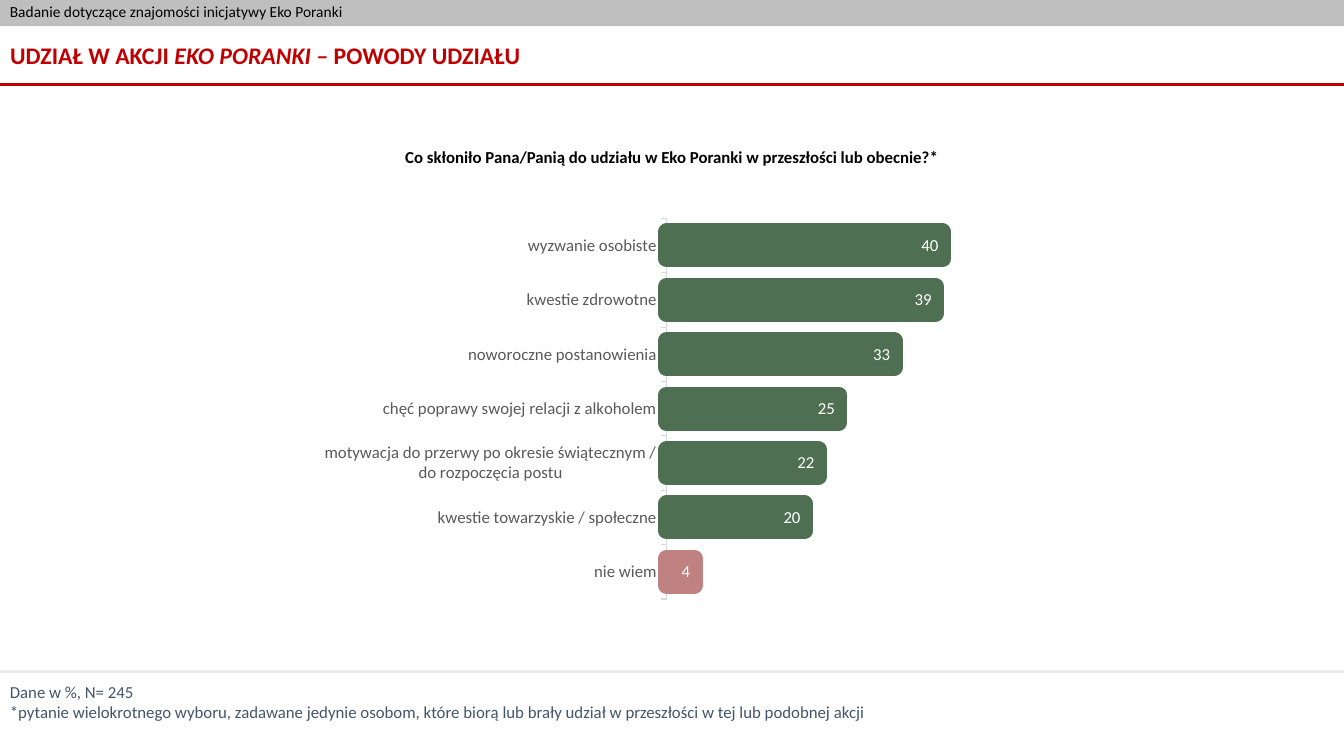
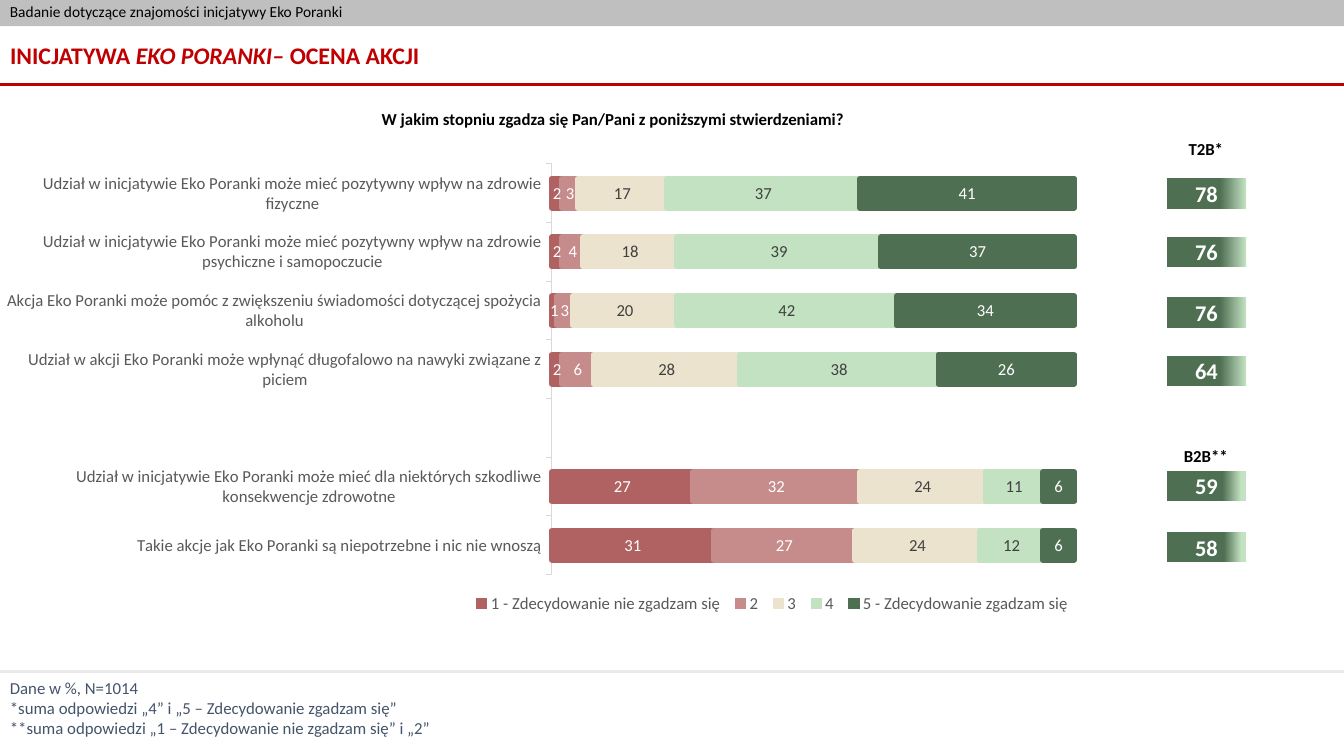
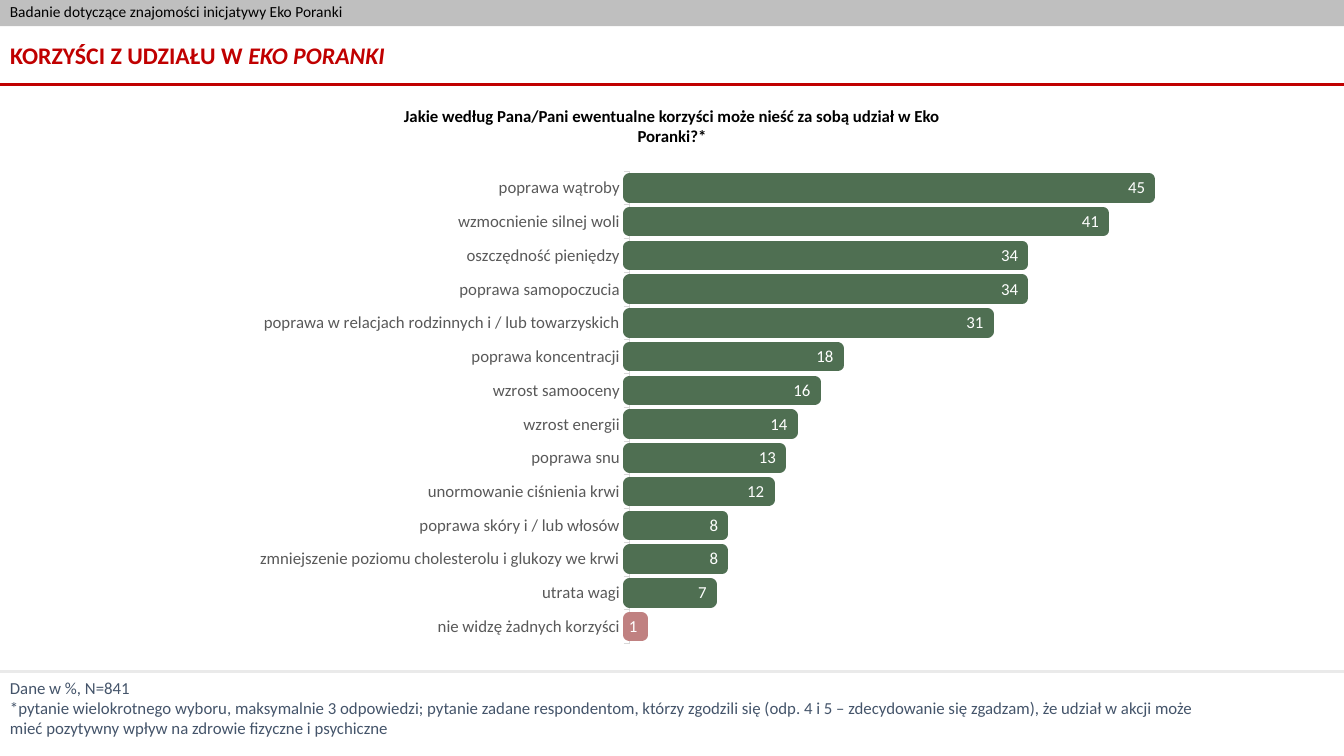
from lxml import etree
from pptx import Presentation
from pptx import util as u
from pptx.chart.data import CategoryChartData
from pptx.dml.color import RGBColor
from pptx.enum import chart as ch
from pptx.enum import shapes, text
from pptx.oxml import parse_xml
from pptx.oxml.ns import nsdecls, qn

WIDTH, HEIGHT = 13.33, 7.5
RED, GREEN, MINT, ROSE = "C00000", "4F6F52", "C3E2C2", "C08181"
WHITE, INK = "FFFFFF", "404040"
BAND_TEXT = "Badanie dotyczące znajomości inicjatywy Eko Poranki"
RULES = [(6.66, "EAEAEA"), (0.84, RED)]

BAND_FONT = {"name": "Calibri", "size": u.Pt(11), "color": "000000"}
TITLE_FONT = {"name": "Calibri", "size": u.Pt(17), "color": RED, "bold": True}
QUESTION_FONT = {"name": "Calibri", "size": u.Pt(12), "color": "000000", "bold": True}
NOTE_FONT = {"name": "Calibri", "size": u.Pt(12), "color": "44546A"}
SCORE_FONT = {"name": "Calibri", "size": u.Pt(16), "color": WHITE, "bold": True}
CHART_FONT = {"name": "Calibri", "size": u.Pt(10), "color": "000000"}
AXIS_FONT = {"name": "Calibri", "size": u.Pt(12), "color": "595959"}

DECK = [
    {
        "title": [("UDZIAŁ W AKCJI ", False), ("EKO PORANKI – ", True), ("POWODY UDZIAŁU", False)],
        "question": ("Co skłoniło Pana/Panią do udziału w Eko Poranki w przeszłości lub obecnie?*",
                     (3.64, 1.41, 6.05, 0.3)),
        "notes": ["Dane w %, N= 245",
                  "*pytanie wielokrotnego wyboru, zadawane jedynie osobom, które biorą lub brały "
                  "udział w przeszłości w tej lub podobnej akcji"],
        "notes_box": (0, 6.71, 11.4, 0.5),
        "chart": {
            "box": (3.14, 1.93, 6.55, 4.45), "plot": (0.53, 0.053, 0.47, 0.849),
            "maximum": 45, "outline": 12,
            "answers": [("nie wiem", 4), ("kwestie towarzyskie / społeczne", 20),
                        ("motywacja do przerwy po okresie świątecznym / do rozpoczęcia postu", 22),
                        ("chęć poprawy swojej relacji z alkoholem", 25),
                        ("noworoczne postanowienia", 33), ("kwestie zdrowotne", 39),
                        ("wyzwanie osobiste", 40)],
            "series": [("Series 1", GREEN, WHITE)],
        },
    },
    {
        "title": [("INICJATYWA ", False), ("EKO PORANKI– ", True), ("OCENA AKCJI", False)],
        "question": ("W jakim stopniu zgadza się Pan/Pani z poniższymi stwierdzeniami?",
                     (2.39, 1.03, 7.38, 0.3)),
        "notes": ["Dane w %, N=1014",
                  "*suma odpowiedzi „4” i „5 – Zdecydowanie zgadzam się”",
                  "**suma odpowiedzi „1 – Zdecydowanie nie zgadzam się” i „2”"],
        "notes_box": (0, 6.67, 11.4, 0.71),
        "chart": {
            "box": (0.07, 1.47, 10.67, 4.75), "plot": (0.504, 0.033, 0.488, 0.858),
            "legend": (0.425, 0.917, 0.57, 0.07), "outline": 4,
            "answers": [
                ("Udział w inicjatywie Eko Poranki może mieć pozytywny wpływ na zdrowie fizyczne",
                 2, 3, 17, 37, 41),
                ("Udział w inicjatywie Eko Poranki może mieć pozytywny wpływ na zdrowie "
                 "psychiczne i samopoczucie", 2, 4, 18, 39, 37),
                ("Akcja Eko Poranki może pomóc z zwiększeniu świadomości dotyczącej spożycia alkoholu",
                 1, 3, 20, 42, 34),
                ("Udział w akcji Eko Poranki może wpłynąć długofalowo na nawyki związane z piciem",
                 2, 6, 28, 38, 26),
                ("", None, None, None, None, None),
                ("Udział w inicjatywie Eko Poranki może mieć dla niektórych szkodliwe "
                 "konsekwencje zdrowotne", 27, 32, 24, 11, 6),
                ("Takie akcje jak Eko Poranki są niepotrzebne i nic nie wnoszą", 31, 27, 24, 12, 6)],
            "series": [("1 - Zdecydowanie nie zgadzam się", "B06161", WHITE),
                       ("2", "C68C8C", WHITE), ("3", "ECE3CE", INK), ("4", MINT, INK),
                       ("5 - Zdecydowanie zgadzam się", GREEN, WHITE)],
        },
        "score_heads": [("T2B*", 1.33), ("B2B**", 4.37)],
        "scores": [("78", 1.77, 0.67, 1), ("76", 2.35, 0.67, 1), ("76", 2.95, 0.67, 1),
                   ("64", 3.53, 0.67, 1), ("59", 4.67, 0.7, 0.94), ("58", 5.28, 0.72, 0.94)],
    },
    {
        "title": [("KORZYŚCI Z UDZIAŁU W ", False), ("EKO PORANKI", True)],
        "question": ("Jakie według Pana/Pani ewentualne korzyści może nieść za sobą udział "
                     "w Eko Poranki?*", (3.64, 1, 6.05, 0.5)),
        "notes": ["Dane w %, N=841",
                  "*pytanie wielokrotnego wyboru, maksymalnie 3 odpowiedzi; pytanie zadane "
                  "respondentom, którzy zgodzili się (odp. 4 i 5 – zdecydowanie się zgadzam), "
                  "że udział w akcji może mieć pozytywny wpływ na zdrowie fizyczne i psychiczne"],
        "notes_box": (0, 6.67, 12.19, 0.71),
        "chart": {
            "box": (0.12, 1.53, 11.85, 4.95), "plot": (0.517, 0.034, 0.483, 0.947),
            "maximum": 50, "outline": 9,
            "answers": [("nie widzę żadnych korzyści", 1), ("utrata wagi", 7),
                        ("zmniejszenie poziomu cholesterolu i glukozy we krwi", 8),
                        ("poprawa skóry i / lub włosów", 8), ("unormowanie ciśnienia krwi", 12),
                        ("poprawa snu", 13), ("wzrost energii", 14), ("wzrost samooceny", 16),
                        ("poprawa koncentracji", 18),
                        ("poprawa w relacjach rodzinnych i / lub towarzyskich", 31),
                        ("poprawa samopoczucia", 34), ("oszczędność pieniędzy", 34),
                        ("wzmocnienie silnej woli", 41), ("poprawa wątroby", 45)],
            "series": [("Series 1", GREEN, WHITE)],
        },
    },
]


def rgb(code):
    return RGBColor.from_string(code)


def inches(box):
    return [u.Inches(side) for side in box]


def style(target, formats):
    for key, value in formats.items():
        if key == "color":
            target.color.rgb = rgb(value)
        else:
            setattr(target, key, value)


def write(shape, lines, font, align=text.PP_ALIGN.LEFT, anchor=text.MSO_ANCHOR.TOP):
    frame = shape.text_frame
    style(frame, {"word_wrap": True, "auto_size": text.MSO_AUTO_SIZE.NONE,
                  "vertical_anchor": anchor})
    for index, line in enumerate(lines):
        paragraph = frame.add_paragraph() if index else frame.paragraphs[0]
        paragraph.alignment = align
        run = paragraph.add_run()
        run.text = line
        style(run.font, font)


def add_text(slide, box, lines, font, align=text.PP_ALIGN.LEFT):
    write(slide.shapes.add_textbox(*inches(box)), lines, font, align)


def add_rectangle(slide, box):
    rectangle = slide.shapes.add_shape(shapes.MSO_SHAPE.RECTANGLE, *inches(box))
    rectangle.shadow.inherit = False
    rectangle.line.fill.background()
    return rectangle


def furnish_layout(layout, slide):
    band = add_rectangle(slide, (0, -0.03, WIDTH, 0.29))
    band.fill.solid()
    band.fill.fore_color.rgb = rgb("808080")
    tone = band.element.spPr.find(qn("a:solidFill"))[0]
    etree.SubElement(tone, qn("a:alpha")).set("val", "50000")
    write(band, [BAND_TEXT], BAND_FONT)
    parts = [band]
    for y, color in RULES:
        rule = slide.shapes.add_connector(shapes.MSO_CONNECTOR.STRAIGHT,
                                          *inches((0, y, WIDTH, y)))
        style(rule.line, {"color": color, "width": u.Pt(2)})
        etree.SubElement(rule.element.spPr, qn("a:effectLst"))
        parts.append(rule)
    for number, part in enumerate(parts, 20):
        part.element.xpath(".//p:cNvPr")[0].set("id", str(number))
        layout.shapes.element.append(part.element)


def set_title(slide, pieces):
    title = slide.shapes.title
    style(title, dict(zip(("left", "top", "width", "height"), inches((0, 0.29, WIDTH, 0.55)))))
    style(title.text_frame, {"word_wrap": True, "auto_size": text.MSO_AUTO_SIZE.NONE,
                             "vertical_anchor": text.MSO_ANCHOR.MIDDLE})
    paragraph = title.text_frame.paragraphs[0]
    style(paragraph, {"alignment": text.PP_ALIGN.LEFT, "line_spacing": 0.9})
    for words, italic in pieces:
        run = paragraph.add_run()
        run.text = words
        style(run.font, {**TITLE_FONT, "italic": italic})


def place(parent, index, box, inner=False):
    for old in parent.findall(qn("c:layout")):
        parent.remove(old)
    target = '<c:layoutTarget val="inner"/>' if inner else ""
    modes = "".join(f'<c:{side}Mode val="edge"/>' for side in "xy")
    sides = "".join(f'<c:{side} val="{share}"/>' for side, share in zip("xywh", box))
    parent.insert(index, parse_xml(
        f'<c:layout {nsdecls("c")}><c:manualLayout>{target}{modes}{sides}'
        "</c:manualLayout></c:layout>"))


def paint(part, color, outline):
    part.format.fill.solid()
    part.format.fill.fore_color.rgb = rgb(color)
    style(part.format.line, {"color": color, "width": u.Pt(outline)})


def add_bars(slide, content):
    scale = "legend" in content
    names, *columns = zip(*content["answers"])
    data = CategoryChartData(number_format="0")
    data.categories = names
    for (name, _, _), values in zip(content["series"], columns):
        data.add_series(name, values)
    kind = ch.XL_CHART_TYPE.BAR_STACKED_100 if scale else ch.XL_CHART_TYPE.BAR_STACKED
    chart = slide.shapes.add_chart(kind, *inches(content["box"]), data).chart
    style(chart, {"has_title": False, "has_legend": scale})
    style(chart.font, CHART_FONT)

    answers_axis, value_axis = chart.category_axis, chart.value_axis
    style(answers_axis, {"major_tick_mark": ch.XL_TICK_MARK.OUTSIDE,
                         "has_major_gridlines": False, "reverse_order": scale})
    style(answers_axis.tick_labels.font, AXIS_FONT)
    style(answers_axis.format.line, {"color": "D9D9D9", "width": u.Pt(0.75)})
    style(value_axis, {"has_major_gridlines": False, "visible": False})
    if not scale:
        style(value_axis, {"minimum_scale": 0, "maximum_scale": content["maximum"]})

    bars = chart.plots[0]
    style(bars, {"gap_width": 100, "overlap": 100, "vary_by_categories": False})
    spot = ch.XL_LABEL_POSITION.CENTER if scale else ch.XL_LABEL_POSITION.INSIDE_END
    for series, (_, color, label_color) in zip(bars.series, content["series"]):
        series.invert_if_negative = False
        paint(series, color, content["outline"])
        style(series.data_labels, {"show_value": True, "position": spot, "number_format": "0",
                                   "number_format_is_linked": False})
        style(series.data_labels.font, {**AXIS_FONT, "color": label_color})
    if not scale:
        paint(bars.series[0].points[0], ROSE, content["outline"])
    for outline in chart.element.xpath(".//c:ser//a:ln"):
        etree.SubElement(outline, qn("a:round"))

    place(chart.element.xpath(".//c:plotArea")[0], 0, content["plot"], inner=True)
    if scale:
        style(chart.legend, {"position": ch.XL_LEGEND_POSITION.BOTTOM,
                             "include_in_layout": False})
        style(chart.legend.font, AXIS_FONT)
        place(chart.element.xpath(".//c:legend")[0], 1, content["legend"])


def add_score(slide, score, top, solid_until, fade_end):
    badge = add_rectangle(slide, (11.57, top, 0.79, 0.3))
    badge.fill.gradient()
    badge.fill.gradient_angle = 0
    stops = zip(badge.fill.gradient_stops, (GREEN, MINT), (solid_until, fade_end))
    for stop, color, position in stops:
        style(stop, {"color": color, "position": position})
    write(badge, [score], SCORE_FONT, text.PP_ALIGN.CENTER, text.MSO_ANCHOR.MIDDLE)


def main():
    deck = Presentation()
    style(deck, {"slide_width": u.Inches(WIDTH), "slide_height": u.Inches(HEIGHT)})
    layout = deck.slide_layouts[5]
    slides = [deck.slides.add_slide(layout) for _ in DECK]
    furnish_layout(layout, slides[0])
    for slide, content in zip(slides, DECK):
        set_title(slide, content["title"])
        add_text(slide, content["notes_box"], content["notes"], NOTE_FONT)
        add_bars(slide, content["chart"])
        question, box = content["question"]
        add_text(slide, box, [question], QUESTION_FONT, text.PP_ALIGN.CENTER)
        for head, top in content.get("score_heads", []):
            add_text(slide, (11.43, top, 1.06, 0.3), [head], QUESTION_FONT, text.PP_ALIGN.CENTER)
        for score in content.get("scores", []):
            add_score(slide, *score)
    deck.save("out.pptx")


if __name__ == "__main__":
    main()
